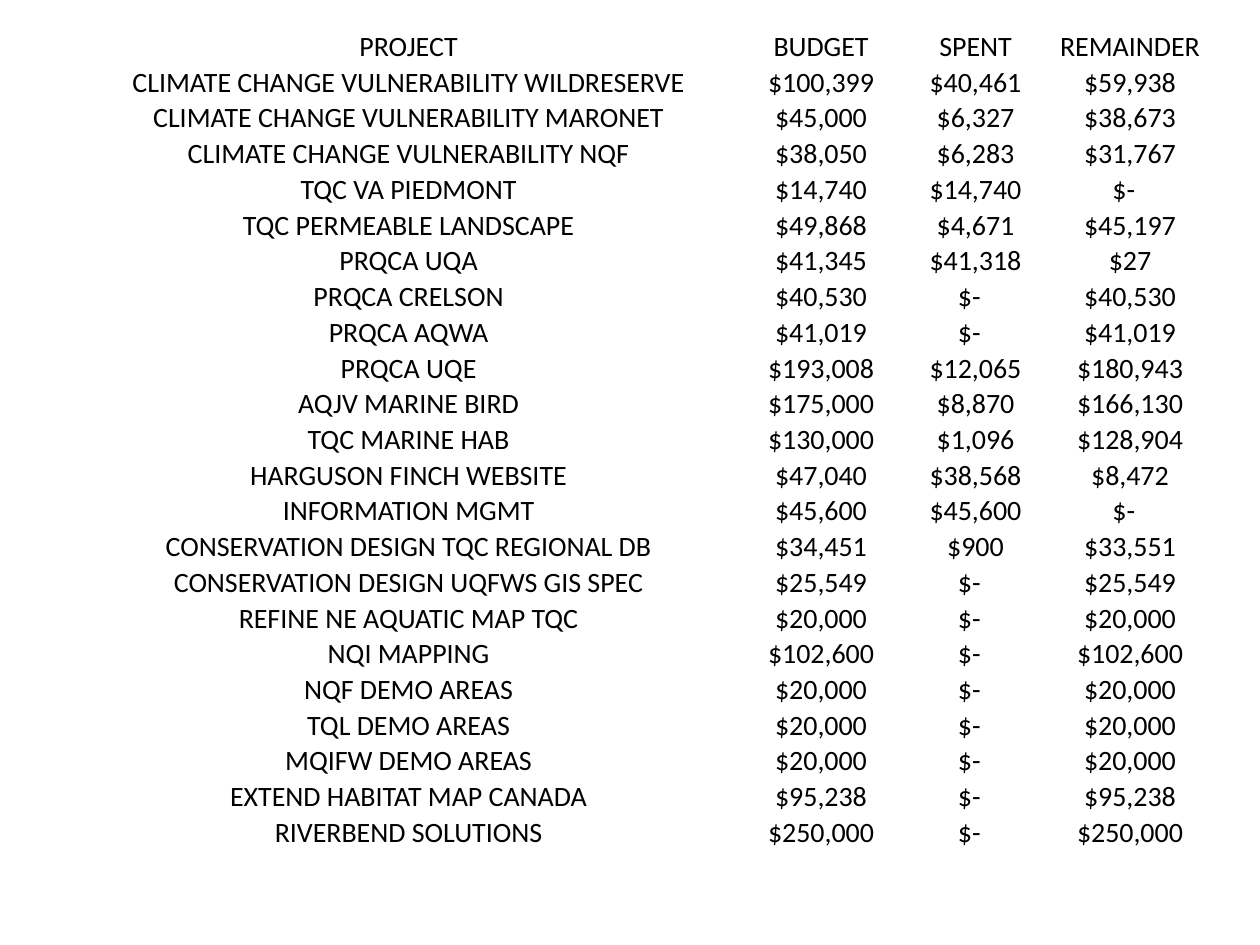
import pptx
import pptx.util
import pptx.dml.color
import pptx.enum.text

BLACK = pptx.dml.color.RGBColor(0, 0, 0)
WIDE = pptx.util.Inches(10)
HIGH = pptx.util.Inches(7.5)
COLS = (5.28, 1.26, 1.19, 1.26)
HEADS = ("PROJECT", "BUDGET", "SPENT", "REMAINDER")
COSTS = (
    ("CLIMATE CHANGE VULNERABILITY WILDRESERVE", 100399, 40461),
    ("CLIMATE CHANGE VULNERABILITY MARONET", 45000, 6327),
    ("CLIMATE CHANGE VULNERABILITY NQF", 38050, 6283),
    ("TQC VA PIEDMONT", 14740, 14740),
    ("TQC PERMEABLE LANDSCAPE", 49868, 4671),
    ("PRQCA UQA", 41345, 41318),
    ("PRQCA CRELSON", 40530, 0),
    ("PRQCA AQWA", 41019, 0),
    ("PRQCA UQE", 193008, 12065),
    ("AQJV MARINE BIRD", 175000, 8870),
    ("TQC MARINE HAB", 130000, 1096),
    ("HARGUSON FINCH WEBSITE", 47040, 38568),
    ("INFORMATION MGMT", 45600, 45600),
    ("CONSERVATION DESIGN TQC REGIONAL DB", 34451, 900),
    ("CONSERVATION DESIGN UQFWS GIS SPEC", 25549, 0),
    ("REFINE NE AQUATIC MAP TQC", 20000, 0),
    ("NQI MAPPING", 102600, 0),
    ("NQF DEMO AREAS", 20000, 0),
    ("TQL DEMO AREAS", 20000, 0),
    ("MQIFW DEMO AREAS", 20000, 0),
    ("EXTEND HABITAT MAP CANADA", 95238, 0),
    ("RIVERBEND SOLUTIONS", 250000, 0),
)


def money(sum_):
    """Format dollars, with a dash for zero."""
    return f"${sum_:,}" if sum_ else "$-"


def write(cell, text, size=16, font="Calibri", color=BLACK, right=0):
    cell.fill.background()
    cell.margin_left = cell.margin_top = cell.margin_bottom = 0
    cell.margin_right = pptx.util.Inches(right)
    cell.vertical_anchor = pptx.enum.text.MSO_ANCHOR.BOTTOM
    para = cell.text_frame.paragraphs[0]
    para.alignment = pptx.enum.text.PP_ALIGN.CENTER
    run = para.add_run()
    run.text = text
    run.font.size = pptx.util.Pt(size)
    run.font.name = font
    run.font.color.rgb = color


def add_costs(slide, left, top, width, height):
    rows = [HEADS] + [
        (name, money(budget), money(spent), money(budget - spent))
        for name, budget, spent in COSTS
    ]
    table = slide.shapes.add_table(
        len(rows), len(COLS), left, top, width, height
    ).table
    table.first_row = table.horz_banding = False
    for col, share in zip(table.columns, COLS):
        col.width = int(width * share / sum(COLS))
    for row, texts in zip(table.rows, rows):
        row.height = height // len(rows)
        for cell, text in zip(row.cells, texts):
            write(cell, text, right=0.1 if text == "$-" else 0)


def main():
    deck = pptx.Presentation()
    deck.slide_width, deck.slide_height = WIDE, HIGH
    slide = deck.slides.add_slide(deck.slide_layouts[6])
    add_costs(slide, int(WIDE * 0.06), int(HIGH * 0.03),
              int(WIDE * 0.9), int(HIGH * 0.87))
    deck.save("out.pptx")


if __name__ == "__main__":
    main()
